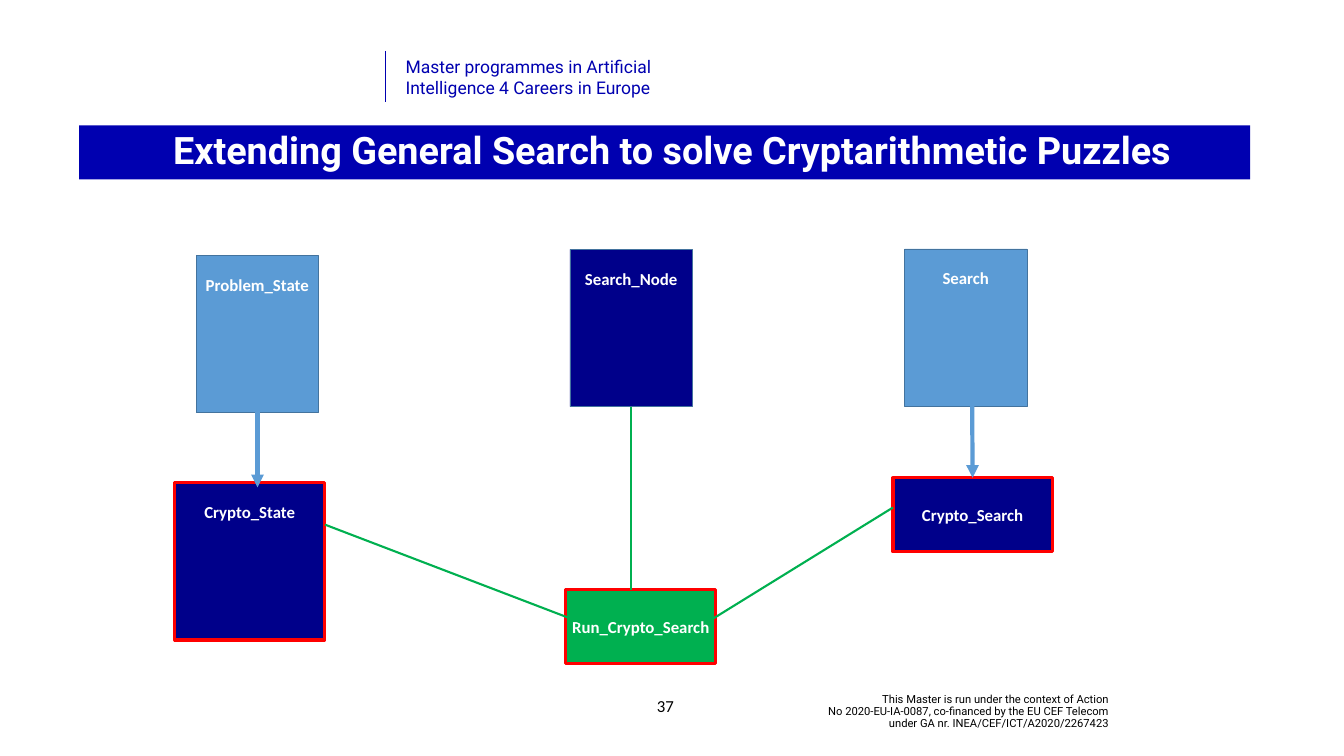
from copy import deepcopy

from lxml import etree
from pptx import Presentation
from pptx.dml.color import RGBColor
from pptx.enum.shapes import MSO_CONNECTOR, MSO_SHAPE
from pptx.enum.text import MSO_ANCHOR, PP_ALIGN
from pptx.oxml.ns import qn
from pptx.util import Emu, Pt

PX = 9144  # 100 px to the inch
LEFT, CENTER, RIGHT = PP_ALIGN.LEFT, PP_ALIGN.CENTER, PP_ALIGN.RIGHT
TOP, MIDDLE = MSO_ANCHOR.TOP, MSO_ANCHOR.MIDDLE
RECTANGLE, STRAIGHT = MSO_SHAPE.RECTANGLE, MSO_CONNECTOR.STRAIGHT

COLORS = {
    "brand": "0000B0", "navy": "00008A", "sky": "5B9BD5", "steel": "43739E",
    "red": "FF0000", "green": "00B050", "white": "FFFFFF", "black": "000000",
}


def rgb(name):
    return RGBColor.from_string(COLORS[name])


def add_text(text, left, top, width, height, fill=None, line=None, line_width=1,
             font="Calibri", size=24, color="white", bold=False, align=CENTER,
             anchor=MIDDLE, spacing=None, insets=(10, 5, 10, 5)):
    box = [Emu(value * PX) for value in (left, top, width, height)]
    if fill:
        shape = slide.shapes.add_shape(RECTANGLE, *box)
        shape.shadow.inherit = False
        shape.fill.solid()
        shape.fill.fore_color.rgb = rgb(fill)
        if line:
            shape.line.color.rgb = rgb(line)
            shape.line.width = Pt(line_width)
        else:
            shape.line.fill.background()
    else:
        shape = slide.shapes.add_textbox(*box)
    frame = shape.text_frame
    frame.word_wrap = True
    frame.vertical_anchor = anchor
    (frame.margin_left, frame.margin_top,
     frame.margin_right, frame.margin_bottom) = [Emu(value * PX) for value in insets]
    paragraph = frame.paragraphs[0]
    paragraph.text = text
    paragraph.alignment = align
    if spacing:
        paragraph.line_spacing = spacing
    for run in paragraph.runs:
        run.font.name = font
        run.font.size = Pt(size)
        run.font.bold = bold
        run.font.color.rgb = rgb(color)
    # Line breaks take the same format as the text around them
    for line_break in paragraph._p.findall(qn("a:br")):
        line_break.append(deepcopy(paragraph.runs[0]._r.rPr))


presentation = Presentation()
presentation.slide_width = Emu(2667 * PX)
presentation.slide_height = Emu(1500 * PX)
slide = presentation.slides.add_slide(presentation.slide_layouts[6])

# Header, title bar and footer
add_text("Master programmes in Artificial\nIntelligence 4 Careers in Europe",
         795, 106, 637, 94, font="Roboto", size=25, color="brand",
         align=LEFT, anchor=TOP)
add_text("Extending General Search to solve Cryptarithmetic Puzzles",
         157, 249, 2324, 107, fill="brand", font="Roboto", size=54, bold=True,
         spacing=0.9, insets=(40, 5, 10, 5))
add_text("37", 1265, 1361, 111, 80, color="black")
add_text("This Master is run under the context of Action\n"
         "No 2020-EU-IA-0087, co-financed by the EU CEF Telecom\n"
         "under GA nr. INEA/CEF/ICT/A2020/2267423",
         1502, 1374, 708, 76, font="Roboto", size=16, color="black",
         align=RIGHT, spacing=0.9)

# Classes with their name near the top
tall_classes = [
    ("Problem_State", 389, 507, 243, "sky", "steel", 1),
    ("Search_Node", 1131, 495, 243, "navy", "steel", 1),
    ("Search", 1795, 494, 243, "sky", "steel", 1),
    ("Crypto_State", 347, 958, 297, "navy", "red", 4.5),
]
for name, left, top, width, fill, line, line_width in tall_classes:
    add_text(name, left, top, width, 312, fill=fill, line=line,
             line_width=line_width, bold=True, anchor=TOP, insets=(10, 38, 10, 5))

# Classes with a centred name
short_classes = [
    ("Crypto_Search", 1772, 948, 316, "navy"),
    ("Run_Crypto_Search", 1123, 1170, 297, "green"),
]
for name, left, top, width, fill in short_classes:
    add_text(name, left, top, width, 147, fill=fill, line="red", line_width=4.5,
             bold=True, insets=(5, 5, 5, 5))

# Header rule, inheritance arrows and usage links
connectors = [
    (765, 101, 765, 203, "brand", 0.5, False),
    (511, 789, 511, 967, "sky", 6, True),
    (1929, 772, 1930, 948, "sky", 6, True),
    (645, 1041, 1155, 1236, "green", 3, False),
    (1253, 807, 1253, 1170, "green", 3, False),
    (1406, 1233, 1772, 1007, "green", 3, False),
]
for x1, y1, x2, y2, color, width, has_arrow in connectors:
    connector = slide.shapes.add_connector(
        STRAIGHT, *[Emu(value * PX) for value in (x1, y1, x2, y2)])
    connector.line.color.rgb = rgb(color)
    connector.line.width = Pt(width)
    if has_arrow:
        etree.SubElement(connector.line._get_or_add_ln(), qn("a:tailEnd"),
                         type="triangle")
    etree.SubElement(connector._element.spPr, qn("a:effectLst"))

presentation.save("out.pptx")
